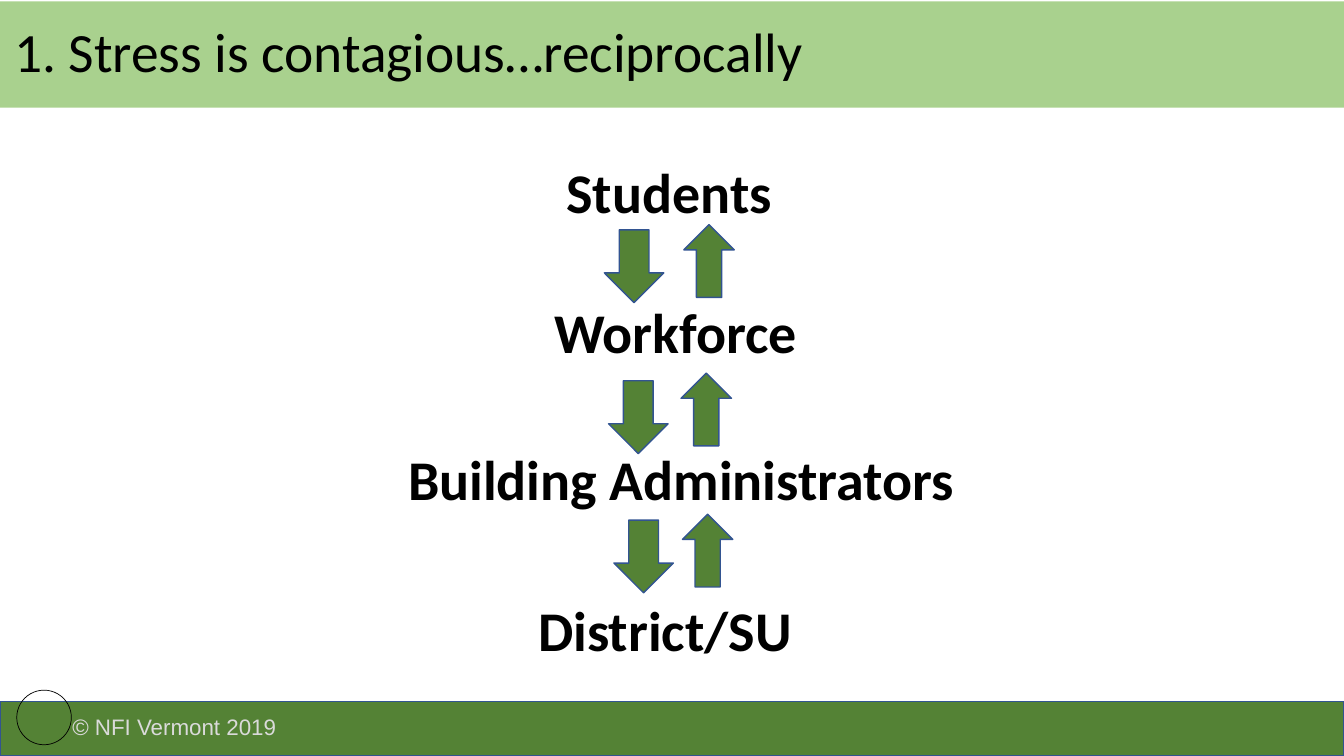
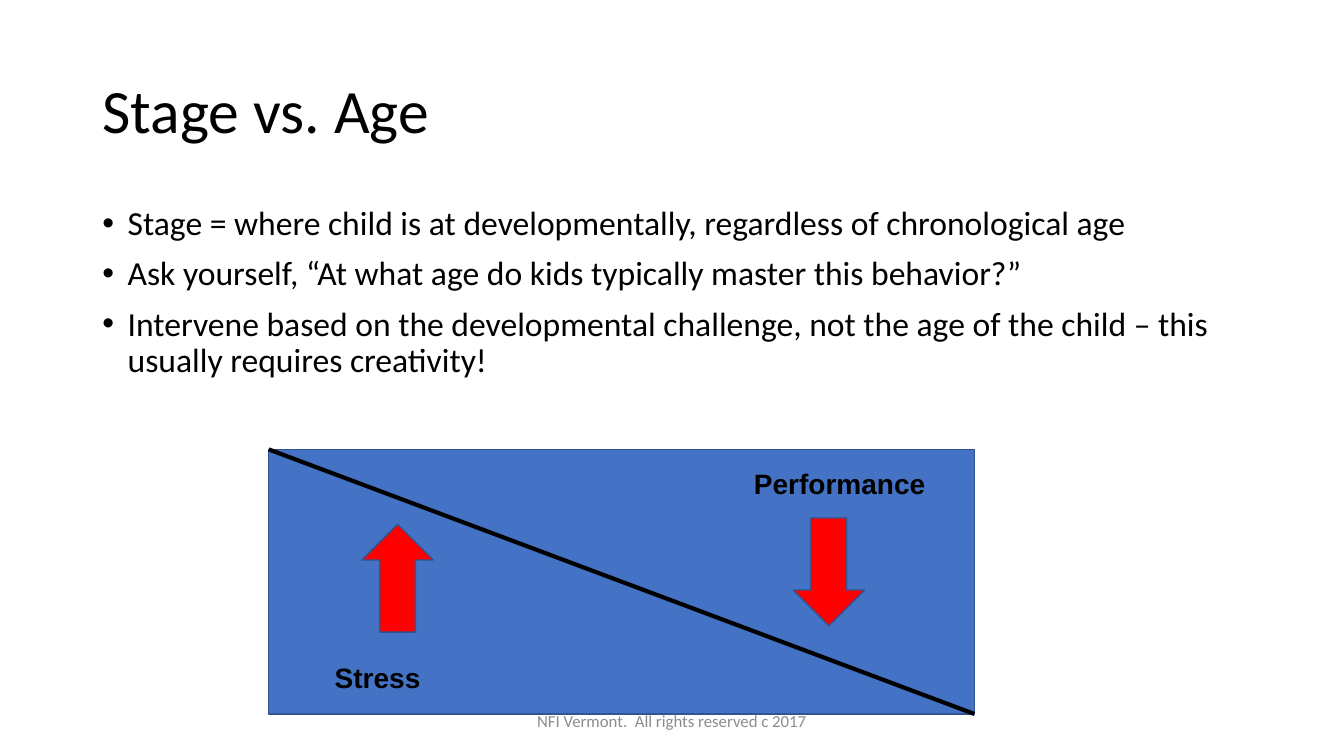
from lxml import etree
from pptx import Presentation
from pptx.dml.color import RGBColor
from pptx.enum.shapes import MSO_CONNECTOR, MSO_SHAPE
from pptx.enum.text import MSO_ANCHOR, MSO_AUTO_SIZE, PP_ALIGN
from pptx.oxml.ns import qn
from pptx.util import Pt

# Enum members
LEFT, CENTER = PP_ALIGN.LEFT, PP_ALIGN.CENTER
TOP, MIDDLE = MSO_ANCHOR.TOP, MSO_ANCHOR.MIDDLE
RECTANGLE, OVAL = MSO_SHAPE.RECTANGLE, MSO_SHAPE.OVAL
DOWN_ARROW, UP_ARROW = MSO_SHAPE.DOWN_ARROW, MSO_SHAPE.UP_ARROW

# Colours
BLACK = RGBColor(0x00, 0x00, 0x00)
DARK_GREEN = RGBColor(0x54, 0x82, 0x35)
LIGHT_GREEN = RGBColor(0xA9, 0xD1, 0x8E)
BLUE = RGBColor(0x44, 0x72, 0xC4)
OUTLINE_BLUE = RGBColor(0x32, 0x54, 0x91)
RED = RGBColor(0xFF, 0x00, 0x00)
PALE_GREY = RGBColor(0xDA, 0xDA, 0xDA)
FOOTER_GREY = RGBColor(0x8C, 0x8C, 0x8C)

# Sizes in points
SLIDE_WIDTH, SLIDE_HEIGHT = 960, 540
BAND_TOP = 501
LABEL_HEIGHT = 55
TITLE_ONLY, TITLE_AND_CONTENT = 5, 1


def place(shape, left, top, width, height):
    shape.left, shape.top = Pt(left), Pt(top)
    shape.width, shape.height = Pt(width), Pt(height)


def style_font(paragraph, size, name="Calibri", color=BLACK, bold=False):
    for run in paragraph.runs:
        run.font.size, run.font.name = Pt(size), name
        run.font.color.rgb, run.font.bold = color, bold


def add_shape(slide, kind, box, fill=None, line=OUTLINE_BLUE, line_width=1):
    shape = slide.shapes.add_shape(kind, *map(Pt, box))
    shape.shadow.inherit = False
    if fill is None:
        shape.fill.background()
    else:
        shape.fill.solid()
        shape.fill.fore_color.rgb = fill
    shape.line.color.rgb = line
    shape.line.width = Pt(line_width)
    return shape


def add_text(slide, text, box, size, align=LEFT, anchor=TOP, wrap=True, **font):
    text_frame = slide.shapes.add_textbox(*map(Pt, box)).text_frame
    text_frame.word_wrap = wrap
    text_frame.vertical_anchor = anchor
    text_frame.text = text
    paragraph = text_frame.paragraphs[0]
    paragraph.alignment = align
    style_font(paragraph, size, **font)


def add_line(slide, start, end, color, width):
    line = slide.shapes.add_connector(MSO_CONNECTOR.STRAIGHT, *map(Pt, start + end))
    line.line.color.rgb = color
    line.line.width = Pt(width)
    etree.SubElement(line._element.spPr, qn("a:effectLst"))


def set_title(slide, text, box, size):
    title = slide.shapes.title
    place(title, *box)
    title.text_frame.text = text
    title.text_frame.auto_size = MSO_AUTO_SIZE.NONE
    title.text_frame.vertical_anchor = MIDDLE
    paragraph = title.text_frame.paragraphs[0]
    paragraph.alignment = LEFT
    paragraph.line_spacing = 0.9
    style_font(paragraph, size)
    return title


def set_bullets(placeholder, items, box, size):
    place(placeholder, *box)
    text_frame = placeholder.text_frame
    text_frame.text = "\n".join(items)
    text_frame.auto_size = MSO_AUTO_SIZE.NONE
    for index, paragraph in enumerate(text_frame.paragraphs):
        properties = paragraph._p.get_or_add_pPr()
        properties.set("marL", str(Pt(18)))
        properties.set("indent", str(-Pt(18)))
        etree.SubElement(properties, qn("a:buFont")).set("typeface", "Arial")
        etree.SubElement(properties, qn("a:buChar")).set("char", "•")
        paragraph.line_spacing = 0.9
        paragraph.space_before = Pt(10 if index else 0)
        style_font(paragraph, size)


def build_stress_slide(presentation):
    slide = presentation.slides.add_slide(presentation.slide_layouts[TITLE_ONLY])

    # Title band
    title = set_title(slide, "1. Stress is contagious…reciprocally",
                      (0, 1, SLIDE_WIDTH, 76), 39.6)
    title.fill.solid()
    title.fill.fore_color.rgb = LIGHT_GREEN
    title.text_frame.margin_left = Pt(10)

    # Footer band with a plain circle
    add_shape(slide, RECTANGLE,
              (0, BAND_TOP, SLIDE_WIDTH, SLIDE_HEIGHT - BAND_TOP), DARK_GREEN)
    add_text(slide, "© NFI Vermont 2019", (44.6, 506, 186, 27), 16,
             name="Arial", color=PALE_GREY)
    add_shape(slide, OVAL, (12, 493, 39, 39), line=BLACK, line_width=0.5)

    # Levels: text, centre, top, width
    levels = [
        ("Students", 478, 109, 163),
        ("Workforce", 482.5, 209, 190),
        ("Building Administrators", 486.5, 314, 409),
        ("District/SU", 475, 422, 198),
    ]
    for text, center, top, width in levels:
        add_text(slide, text, (center - width / 2, top, width, LABEL_HEIGHT), 40,
                 align=CENTER, wrap=False, bold=True)

    # Arrow pairs: down left, down top, up left, up top
    arrow_pairs = [
        (431.7, 164.2, 488.5, 160.5),
        (434.7, 272, 486.5, 266.5),
        (438.5, 371.5, 487.5, 367.3),
    ]
    for down_left, down_top, up_left, up_top in arrow_pairs:
        add_shape(slide, DOWN_ARROW, (down_left, down_top, 42.5, 52), DARK_GREEN)
        add_shape(slide, UP_ARROW, (up_left, up_top, 36, 52), DARK_GREEN)


def build_stage_slide(presentation):
    slide = presentation.slides.add_slide(presentation.slide_layouts[TITLE_AND_CONTENT])

    # Title, list and footer
    set_title(slide, "Stage vs. Age", (66, 29, 828, 104), 44)
    set_bullets(slide.placeholders[1], [
        "Stage = where child is at developmentally, regardless of chronological age",
        "Ask yourself, “At what age do kids typically master this behavior?”",
        "Intervene based on the developmental challenge, not the age of the child"
        " – this usually requires creativity!",
    ], (66, 144, 828, 343), 24)
    add_text(slide, "NFI Vermont.  All rights reserved c 2017", (318, 500.5, 324, 29), 12,
             align=CENTER, anchor=MIDDLE, color=FOOTER_GREY)

    # Divided panel
    left, top, width, height = panel = (192, 321, 504, 189)
    add_shape(slide, RECTANGLE, panel, BLUE)
    add_line(slide, (left, top), (left + width, top + height), BLACK, 3)

    # Panel labels and arrows
    for text, label_box, arrow, arrow_left, arrow_top in [
        ("Stress", (232, 468, 104, 32), UP_ARROW, 258.5, 374.5),
        ("Performance", (531.4, 329.6, 140, 32), DOWN_ARROW, 566.5, 370),
    ]:
        add_text(slide, text, label_box, 20, name="Arial", bold=True)
        add_shape(slide, arrow, (arrow_left, arrow_top, 51, 77), RED)


def main():
    presentation = Presentation()
    presentation.slide_width = Pt(SLIDE_WIDTH)
    presentation.slide_height = Pt(SLIDE_HEIGHT)
    build_stress_slide(presentation)
    build_stage_slide(presentation)
    presentation.save("out.pptx")


if __name__ == "__main__":
    main()
